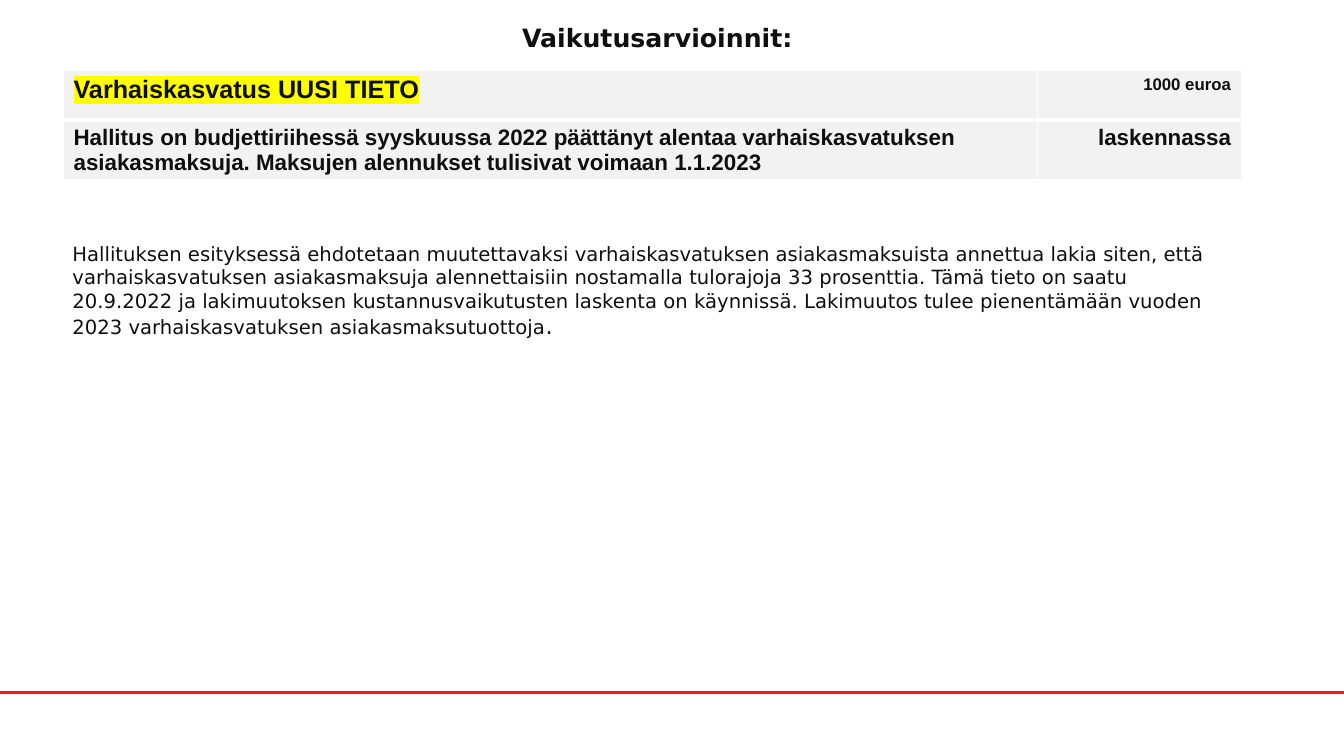
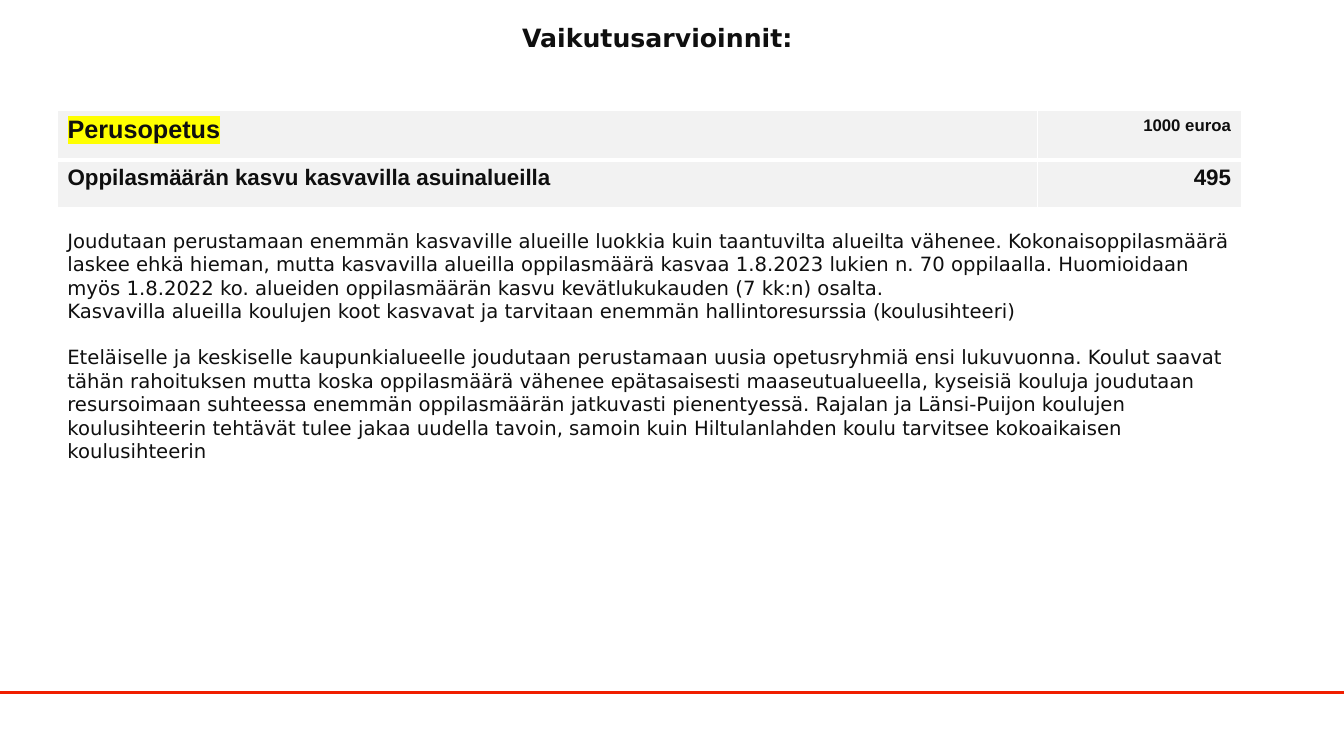
import pptx
import pptx.dml.color
import pptx.enum.shapes
import pptx.enum.text
import pptx.oxml
import pptx.oxml.ns
import pptx.util
from dataclasses import dataclass
from lxml import etree

PX = 9144  # EMU in one px: 100 px to the inch
WIDTH, HEIGHT = 1333, 750
ALIGN = pptx.enum.text.PP_ALIGN
ANCHOR = pptx.enum.text.MSO_ANCHOR


def px(n):
    return pptx.util.Emu(n * PX)


@dataclass(frozen=True)
class Theme:
    ink: str = "0F0F0F"
    accent: str = "F01E00"
    cell: str = "F2F2F2"
    border: str = "FFFFFF"
    marker: str = "FFFF00"
    text_font: str = "DejaVu Sans"
    table_font: str = "Arial"
    title: int = 18
    heading: int = 18
    unit: int = 12
    item: int = 16
    body: int = 14
    full_stop: int = 16
    rule: int = 2
    border_thin: int = 1
    border_thick: int = 3


class Deck:
    """Holds the style and the current slide."""

    right_edge = 1231
    value_width = 202

    def __init__(self, theme):
        self.theme = theme
        self.prs = pptx.Presentation()
        self.prs.slide_width, self.prs.slide_height = px(WIDTH), px(HEIGHT)
        self.s = None

    def rgb(self, value):
        return pptx.dml.color.RGBColor.from_string(value)

    def font(self, p, size, name, bold=False):
        p.font.size = pptx.util.Pt(size)
        p.font.name = name
        p.font.bold = bold
        p.font.color.rgb = self.rgb(self.theme.ink)

    # Slide with the shared title and bottom rule
    def slide(self, title):
        self.s = self.prs.slides.add_slide(self.prs.slide_layouts[5])
        self.rule(687)
        sp = self.s.shapes.title
        sp.left, sp.top, sp.width, sp.height = px(0), px(14), px(1304), px(46)
        tf = sp.text_frame
        tf.text = title
        tf.auto_size = pptx.enum.text.MSO_AUTO_SIZE.NONE
        tf.vertical_anchor = ANCHOR.MIDDLE
        p = tf.paragraphs[0]
        p.alignment = ALIGN.CENTER
        self.font(p, self.theme.title, self.theme.text_font, bold=True)

    def rule(self, y):
        line = self.s.shapes.add_connector(
            pptx.enum.shapes.MSO_CONNECTOR.STRAIGHT, px(0), px(y), px(WIDTH), px(y))
        line.line.color.rgb = self.rgb(self.theme.accent)
        line.line.width = pptx.util.Pt(self.theme.rule)
        etree.SubElement(line._element.spPr, pptx.oxml.ns.qn("a:effectLst"))

    # Two-row cost table: marked heading and unit, then item and value
    def cost_table(self, left, top, row_heights, heading, item, value):
        t = self.theme
        width = self.right_edge - left
        table = self.s.shapes.add_table(
            2, 2, px(left), px(top), px(width), px(sum(row_heights))).table
        table.first_row = table.horz_banding = False
        table.columns[0].width = px(width - self.value_width)
        table.columns[1].width = px(self.value_width)
        rows = [[(heading, t.heading), ("1000 euroa", t.unit)],
                [(item, t.item), (value, t.item)]]
        for i, row in enumerate(rows):
            table.rows[i].height = px(row_heights[i])
            for j, (text, size) in enumerate(row):
                cell = table.cell(i, j)
                cell.text = text
                cell.fill.solid()
                cell.fill.fore_color.rgb = self.rgb(t.cell)
                self.borders(cell, thick="B" if i == 0 else "T")
                p = cell.text_frame.paragraphs[0]
                p.alignment = ALIGN.RIGHT if j else ALIGN.LEFT
                self.font(p, size, t.table_font, bold=True)
        self.highlight(table.cell(0, 0).text_frame.paragraphs[0].runs[0])

    def borders(self, cell, thick):
        t = self.theme
        tcPr = cell._tc.get_or_add_tcPr()
        for i, side in enumerate("LRTB"):
            width = pptx.util.Pt(t.border_thick if side == thick else t.border_thin)
            tcPr.insert(i, pptx.oxml.parse_xml(
                f'<a:ln{side} {pptx.oxml.ns.nsdecls("a")} w="{width}"><a:solidFill>'
                f'<a:srgbClr val="{t.border}"/></a:solidFill></a:ln{side}>'))

    def highlight(self, r):
        r._r.get_or_add_rPr().append(pptx.oxml.parse_xml(
            f'<a:highlight {pptx.oxml.ns.nsdecls("a")}>'
            f'<a:srgbClr val="{self.theme.marker}"/></a:highlight>'))

    # Running text: (space before, text) for each paragraph
    def text(self, left, top, width, height, paragraphs):
        tf = self.s.shapes.add_textbox(px(left), px(top), px(width), px(height)).text_frame
        tf.word_wrap = True
        for i, (space, text) in enumerate(paragraphs):
            p = tf.add_paragraph() if i else tf.paragraphs[0]
            p.add_run().text = text
            if space:
                p.space_before = pptx.util.Pt(space)
            self.font(p, self.theme.body, self.theme.text_font)
        return tf


def main():
    deck = Deck(Theme())
    title = "Vaikutusarvioinnit:"

    # Early childhood education
    deck.slide(title)
    deck.cost_table(
        63, 70, (49, 59), "Varhaiskasvatus UUSI TIETO",
        "Hallitus on budjettiriihessä syyskuussa 2022 päättänyt alentaa varhaiskasvatuksen "
        "asiakasmaksuja. Maksujen alennukset tulisivat voimaan 1.1.2023",
        "laskennassa")
    tf = deck.text(62, 235, 1163, 105, [
        (0, "Hallituksen esityksessä ehdotetaan muutettavaksi varhaiskasvatuksen asiakasmaksuista "
            "annettua lakia siten, että varhaiskasvatuksen asiakasmaksuja alennettaisiin nostamalla "
            "tulorajoja 33 prosenttia. Tämä tieto on saatu 20.9.2022 ja lakimuutoksen "
            "kustannusvaikutusten laskenta on käynnissä. Lakimuutos tulee pienentämään vuoden 2023 "
            "varhaiskasvatuksen asiakasmaksutuottoja")])
    r = tf.paragraphs[0].add_run()
    r.text = "."
    r.font.size = pptx.util.Pt(deck.theme.full_stop)

    # Basic education
    deck.slide(title)
    deck.cost_table(57, 110, (49, 47), "Perusopetus",
                    "Oppilasmäärän kasvu kasvavilla asuinalueilla", "495")
    deck.text(57, 222, 1173, 246, [
        (0, "Joudutaan perustamaan enemmän kasvaville alueille luokkia kuin taantuvilta alueilta "
            "vähenee. Kokonaisoppilasmäärä laskee ehkä hieman, mutta kasvavilla alueilla "
            "oppilasmäärä kasvaa 1.8.2023 lukien n. 70 oppilaalla. Huomioidaan myös 1.8.2022 ko. "
            "alueiden oppilasmäärän kasvu kevätlukukauden (7 kk:n) osalta."),
        (0, "Kasvavilla alueilla koulujen koot kasvavat ja tarvitaan enemmän hallintoresurssia "
            "(koulusihteeri)"),
        (16, "Eteläiselle ja keskiselle kaupunkialueelle joudutaan perustamaan uusia opetusryhmiä "
             "ensi lukuvuonna. Koulut saavat tähän rahoituksen mutta koska oppilasmäärä vähenee "
             "epätasaisesti maaseutualueella, kyseisiä kouluja joudutaan resursoimaan suhteessa "
             "enemmän oppilasmäärän jatkuvasti pienentyessä. Rajalan ja Länsi-Puijon koulujen "
             "koulusihteerin tehtävät tulee jakaa uudella tavoin, samoin kuin Hiltulanlahden koulu "
             "tarvitsee kokoaikaisen koulusihteerin")])

    deck.prs.save("out.pptx")


if __name__ == "__main__":
    main()
